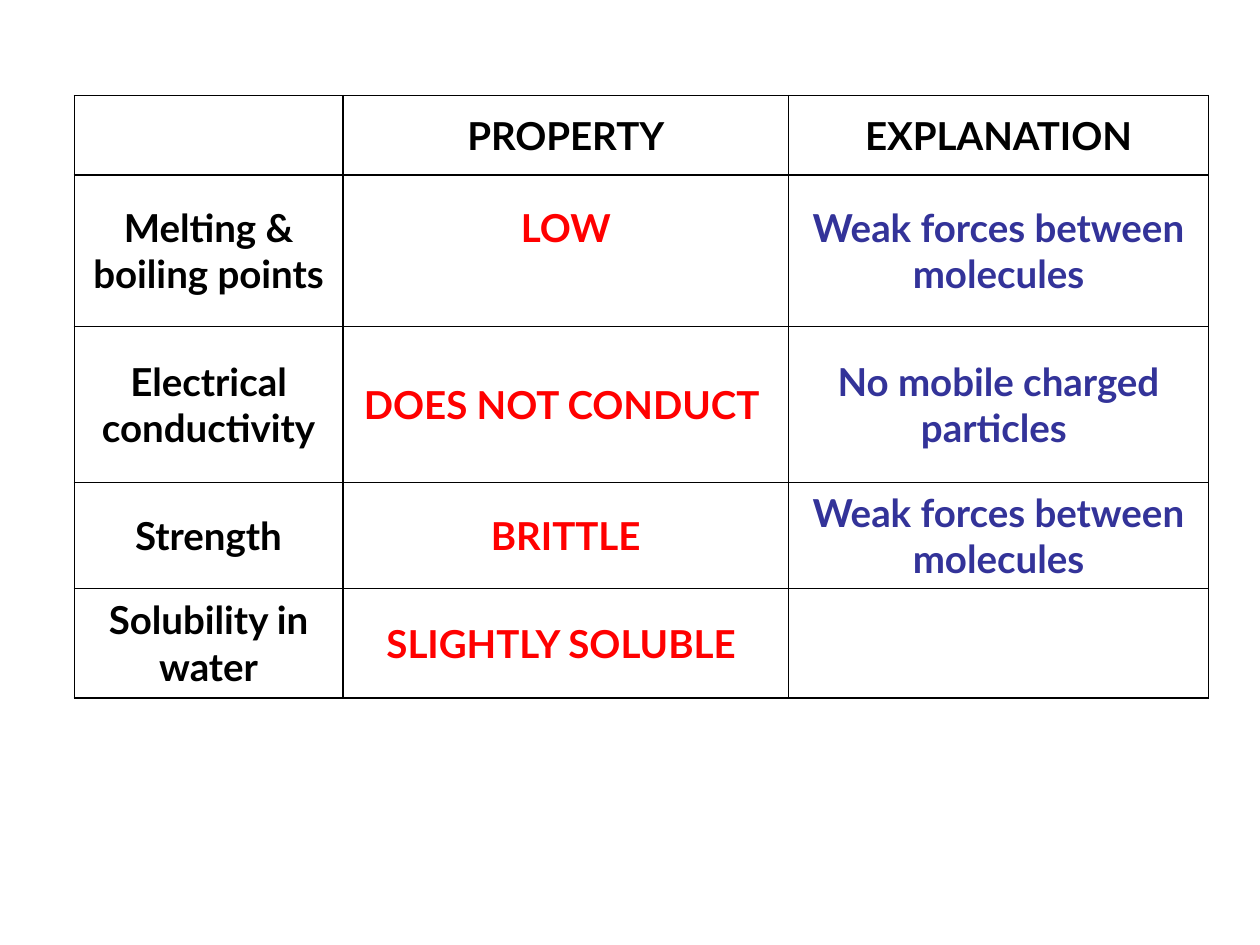
from typing import NamedTuple

from lxml import etree
from pptx import Presentation
from pptx import util as u
from pptx.dml.color import RGBColor
from pptx.enum import text
from pptx.oxml import ns

COLORS = {"heading": "000000", "property": "FF0000", "explanation": "333399",
          "border": "000000", "paper": "FFFFFF"}
FONT = {"name": "Lato", "size": u.Pt(22), "bold": True}
MARGINS = {"margin_left": u.Inches(0.1), "margin_right": u.Inches(0.1),
           "margin_top": u.Inches(0.05), "margin_bottom": u.Inches(0.05)}
COLUMN_WIDTHS = (5.41, 8.99, 8.46)
COLUMN_COLORS = ("heading", "property", "explanation")


class Row(NamedTuple):
    height: float
    texts: tuple[str, str, str]


ROWS = (
    Row(1.6, ("", "PROPERTY", "EXPLANATION")),
    Row(3.05, ("Melting & boiling points", "LOW", "Weak forces between molecules")),
    Row(3.15, ("Electrical conductivity", "DOES NOT CONDUCT ",
               "No mobile charged particles ")),
    Row(2.13, ("Strength", "BRITTLE", "Weak forces between molecules")),
    Row(2.21, ("Solubility in water", "SLIGHTLY SOLUBLE ", "")),
)


def add_borders(cell) -> None:
    tc_pr = cell._tc.get_or_add_tcPr()
    for side in ("lnL", "lnR", "lnT", "lnB"):
        line = etree.SubElement(tc_pr, ns.qn(f"a:{side}"), w=str(u.Pt(1)))
        fill = etree.SubElement(line, ns.qn("a:solidFill"))
        etree.SubElement(fill, ns.qn("a:srgbClr"), val=COLORS["border"])


def format_cell(cell, words: str, color: str) -> None:
    add_borders(cell)
    cell.fill.solid()
    cell.fill.fore_color.rgb = RGBColor.from_string(COLORS["paper"])
    cell.vertical_anchor = text.MSO_ANCHOR.MIDDLE
    for name, value in MARGINS.items():
        setattr(cell, name, value)
    p = cell.text_frame.paragraphs[0]
    p.alignment = text.PP_ALIGN.CENTER
    if not words:
        return
    r = p.add_run()
    r.text = words
    for name, value in FONT.items():
        setattr(r.font, name, value)
    r.font.color.rgb = RGBColor.from_string(COLORS[color])


def add_property_table(slide) -> None:
    frame = slide.shapes.add_table(
        len(ROWS), len(COLUMN_WIDTHS), u.Cm(1.5), u.Cm(1.93),
        u.Cm(sum(COLUMN_WIDTHS)), u.Cm(sum(row.height for row in ROWS)))
    table = frame.table
    table.first_row = table.horz_banding = False
    for column, width in zip(table.columns, COLUMN_WIDTHS):
        column.width = u.Cm(width)
    for i, row in enumerate(ROWS):
        table.rows[i].height = u.Cm(row.height)
        for j, words in enumerate(row.texts):
            color = COLUMN_COLORS[j] if i else "heading"
            format_cell(table.cell(i, j), words, color)
    # Lift LOW level with the first line of its neighbours
    table.cell(1, 1).margin_bottom = u.Inches(0.42)


def main() -> None:
    prs = Presentation()
    prs.slide_width, prs.slide_height = u.Cm(25.4), u.Cm(19.05)
    add_property_table(prs.slides.add_slide(prs.slide_layouts[6]))
    prs.save("out.pptx")


if __name__ == "__main__":
    main()
